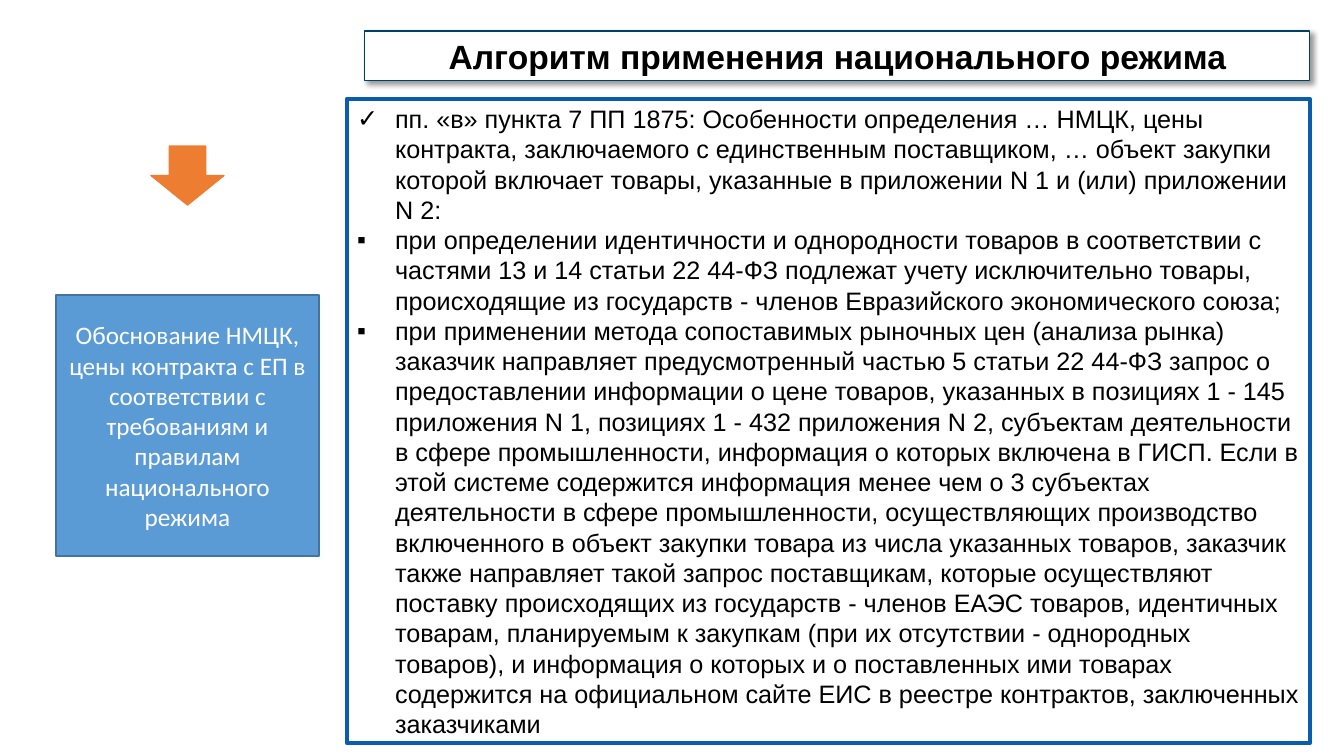
from lxml import etree
from pptx import Presentation
from pptx.dml.color import RGBColor
from pptx.enum.shapes import MSO_SHAPE as Preset
from pptx.enum.text import MSO_ANCHOR as Anchor, MSO_AUTO_SIZE as AutoSize, PP_ALIGN as Align
from pptx.oxml.ns import qn
from pptx.util import Pt

HEADING = "Алгоритм применения национального режима"
STAGE = ("Обоснование НМЦК, цены контракта с ЕП в соответствии с требованиям "
         "и правилам национального режима")
# Bullet, then the sentences of the rule
RULES = [
    ("✓", "пп. «в» пункта 7 ПП 1875: Особенности определения … НМЦК, цены контракта, "
          "заключаемого с единственным поставщиком, … объект закупки которой включает "
          "товары, указанные в приложении N 1 и (или) приложении N 2:"),
    ("▪", "при определении идентичности и однородности товаров в соответствии с частями "
          "13 и 14 статьи 22 44-ФЗ подлежат учету исключительно товары, происходящие из "
          "государств - членов Евразийского экономического союза;"),
    ("▪", "при применении метода сопоставимых рыночных цен (анализа рынка) заказчик "
          "направляет предусмотренный частью 5 статьи 22 44-ФЗ запрос о предоставлении "
          "информации о цене товаров, указанных в позициях 1 - 145 приложения N 1, "
          "позициях 1 - 432 приложения N 2, субъектам деятельности в сфере "
          "промышленности, информация о которых включена в ГИСП.",
          "Если в этой системе содержится информация менее чем о 3 субъектах "
          "деятельности в сфере промышленности, осуществляющих производство "
          "включенного в объект закупки товара из числа указанных товаров, заказчик "
          "также направляет такой запрос поставщикам, которые осуществляют поставку "
          "происходящих из государств - членов ЕАЭС товаров, идентичных товарам, "
          "планируемым к закупкам (при их отсутствии - однородных товаров), и "
          "информация о которых и о поставленных ими товарах содержится на "
          "официальном сайте ЕИС в реестре контрактов, заключенных заказчиками"),
]

# Left, top, width, height in px
SLIDE_SIZE = (1344, 756)
HEADING_BOX = (365, 31, 945, 50)
ARROW_BOX = (158, 139, 59, 73)
STAGE_BOX = (56, 295, 263, 261)
RULES_BOX = (347, 99, 963, 644)
BULLET_INDENT = 38


def px(length):
    return round(length * 914400 / 100.8)


def rgb(hex_color):
    return RGBColor.from_string(hex_color)


def place(shape, box):
    shape.left, shape.top, shape.width, shape.height = map(px, box)


def paint(shape, line, line_width, fill=None):
    if fill:
        shape.fill.solid()
        shape.fill.fore_color.rgb = rgb(fill)
    else:
        shape.fill.background()
    shape.line.color.rgb = rgb(line)
    shape.line.width = Pt(line_width)
    shape.shadow.inherit = False


def drop_shadow(shape):
    effects = shape._element.spPr.find(qn("a:effectLst"))
    shadow = etree.SubElement(effects, qn("a:outerShdw"), blurRad=str(Pt(4)),
                              dist=str(Pt(3)), dir=str(45 * 60000), algn="tl")
    black = etree.SubElement(shadow, qn("a:srgbClr"), val="000000")
    etree.SubElement(black, qn("a:alpha"), val="40000")


def set_frame(shape, anchor):
    frame = shape.text_frame
    frame.word_wrap = True
    frame.auto_size = AutoSize.NONE
    frame.vertical_anchor = anchor
    return frame


def write(paragraph, text, size, font_name, color, align, bold=False, bullet=None):
    paragraph.text = text
    paragraph.alignment = align
    paragraph.space_before = Pt(0)
    if bullet:
        properties = paragraph._p.get_or_add_pPr()
        properties.set("marL", str(px(BULLET_INDENT)))
        properties.set("indent", str(-px(BULLET_INDENT)))
        etree.SubElement(properties, qn("a:buFont"), typeface="Arial")
        etree.SubElement(properties, qn("a:buChar"), char=bullet)
    font = paragraph.font
    font.size, font.name, font.bold = Pt(size), font_name, bold
    font.color.rgb = rgb(color)


def main():
    deck = Presentation()
    deck.slide_width, deck.slide_height = map(px, SLIDE_SIZE)
    slide = deck.slides.add_slide(deck.slide_layouts[1])
    heading, rules = slide.placeholders

    place(heading, HEADING_BOX)
    paint(heading, "004065", 0.75, "FFFFFF")
    drop_shadow(heading)
    write(set_frame(heading, Anchor.MIDDLE).paragraphs[0], HEADING,
          24, "Arial", "000000", Align.CENTER, bold=True)

    arrow = slide.shapes.add_shape(Preset.RIGHT_ARROW, *map(px, ARROW_BOX))
    arrow.rotation = 90
    paint(arrow, "ED7D31", 1, "ED7D31")

    stage = slide.shapes.add_shape(Preset.RECTANGLE, *map(px, STAGE_BOX))
    paint(stage, "43739E", 1, "5B9BD5")
    write(set_frame(stage, Anchor.MIDDLE).paragraphs[0], STAGE,
          18, "Calibri", "FFFFFF", Align.CENTER)

    place(rules, RULES_BOX)
    paint(rules, "0A5CAC", 3)
    frame = set_frame(rules, Anchor.MIDDLE)
    for number, (bullet, *sentences) in enumerate(RULES):
        paragraph = frame.add_paragraph() if number else frame.paragraphs[0]
        write(paragraph, " ".join(sentences), 18, "Arial", "000000", Align.LEFT,
              bullet=bullet)

    deck.save("out.pptx")


if __name__ == "__main__":
    main()
